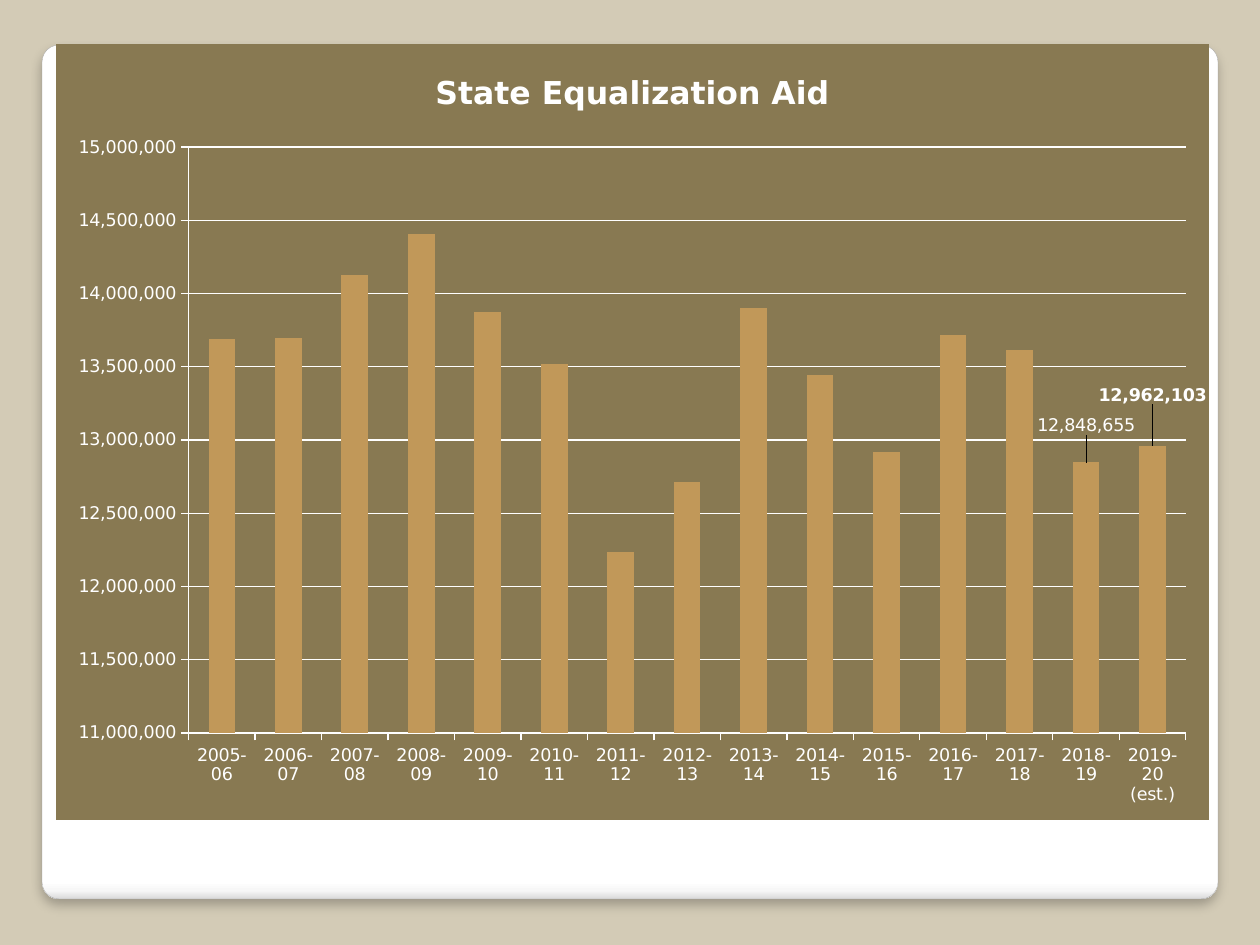
from dataclasses import dataclass

import pptx
import pptx.chart.data
import pptx.dml.color
import pptx.enum.chart
import pptx.enum.shapes
import pptx.oxml
import pptx.util
from pptx.oxml.ns import nsdecls

RGB = pptx.dml.color.RGBColor
BACKGROUND = RGB(0xD3, 0xCB, 0xB6)
WHITE = RGB(0xFF, 0xFF, 0xFF)
CARD_LINE = RGB(0xA4, 0xA4, 0xA4)
CHART_FILL = RGB(0x88, 0x79, 0x52)
BAR = RGB(0xC1, 0x98, 0x59)
FONT = "DejaVu Sans"
PX = 914400 / 126


@dataclass
class Box:
    left: int
    top: int
    width: int
    height: int

    def emu(self) -> list[int]:
        return [round(v * PX) for v in (self.left, self.top, self.width, self.height)]


@dataclass
class ValueLabel:
    point: int
    shift: int
    bold: bool


CARD = Box(42, 45, 1176, 854)
CHART = Box(56, 44, 1153, 776)
PLOT = Box(189, 147, 997, 586)
LABELS = [ValueLabel(13, -22, False), ValueLabel(14, -36, True)]
CARD_STOPS = [(0, WHITE), (98, WHITE), (99, RGB(0xF7, 0xF7, 0xF7)), (100, RGB(0xDA, 0xDA, 0xDA))]
CATEGORIES = [f"{y}-{(y + 1) % 100:02d}" for y in range(2005, 2019)] + ["2019-20 (est.)"]
AID = [
    13691185, 13698377, 14128181, 14408307, 13872778, 13516834, 12234555, 12713521,
    13899117, 13445860, 12917674, 13716336, 13616137, 12848655, 12962103,
]


def set_all(target, values: dict) -> None:
    for name, value in values.items():
        setattr(target, name, value)


def style_font(font, size: int, bold: bool = False) -> None:
    set_all(font, {"name": FONT, "size": pptx.util.Pt(size), "bold": bold})
    font.color.rgb = WHITE


def style_line(line, color: RGB, width: float) -> None:
    line.color.rgb = color
    line.width = pptx.util.Pt(width)


def layout_xml(**parts) -> str:
    inner = "".join(f'<c:{k} val="{v}"/>' for k, v in parts.items())
    return f'<c:layout {nsdecls("c")}><c:manualLayout>{inner}</c:manualLayout></c:layout>'


def add_card(s, box: Box) -> None:
    sp = s.shapes.add_shape(pptx.enum.shapes.MSO_SHAPE.ROUNDED_RECTANGLE, *box.emu())
    sp.adjustments[0] = 0.02
    style_line(sp.line, CARD_LINE, 0.16)
    stops = "".join(f'<a:gs pos="{p * 1000}"><a:srgbClr val="{c}"/></a:gs>' for p, c in CARD_STOPS)
    props = sp._element.spPr
    props.find(pptx.oxml.ns.qn("a:prstGeom")).addnext(pptx.oxml.parse_xml(
        f'<a:gradFill {nsdecls("a")}><a:gsLst>{stops}</a:gsLst>'
        '<a:lin ang="5400000" scaled="0"/></a:gradFill>'))
    props.append(pptx.oxml.parse_xml(
        f'<a:effectLst {nsdecls("a")}><a:outerShdw blurRad="76200" dist="50800" dir="5400000">'
        '<a:srgbClr val="000000"><a:alpha val="25000"/></a:srgbClr></a:outerShdw></a:effectLst>'))


def style_axes(chart) -> None:
    for axis in (chart.category_axis, chart.value_axis):
        axis.major_tick_mark = pptx.enum.chart.XL_TICK_MARK.OUTSIDE
        style_line(axis.format.line, WHITE, 0.75)
        style_font(axis.tick_labels.font, 10)
    axis = chart.value_axis
    set_all(axis, {"minimum_scale": 11000000, "maximum_scale": 15000000,
                   "major_unit": 500000, "has_major_gridlines": True})
    set_all(axis.tick_labels, {"number_format": "#,##0", "number_format_is_linked": False})
    style_line(axis.major_gridlines.format.line, WHITE, 0.75)


def add_value_label(series, label: ValueLabel) -> None:
    data_label = series.points[label.point].data_label
    style_font(data_label.font, 10, label.bold)
    data_label.position = pptx.enum.chart.XL_LABEL_POSITION.OUTSIDE_END
    dlbl = series.data_labels._element.dLbl_lst[-1]
    dlbl[0].addnext(pptx.oxml.parse_xml(layout_xml(x=0, y=round(label.shift / CHART.height, 3))))


def add_aid_chart(s, box: Box) -> None:
    data = pptx.chart.data.CategoryChartData(number_format="#,##0")
    data.categories = CATEGORIES
    data.add_series("Series 1", AID)
    kind = pptx.enum.chart.XL_CHART_TYPE.COLUMN_CLUSTERED
    chart = s.shapes.add_chart(kind, *box.emu(), data).chart
    style_font(chart.font, 10)
    chart.has_legend = False
    p = chart.chart_title.text_frame.paragraphs[0]
    r = p.add_run()
    r.text = "State Equalization Aid"
    style_font(r.font, 18, True)
    style_axes(chart)

    plot = chart.plots[0]
    set_all(plot, {"gap_width": 150, "vary_by_categories": False})
    series = plot.series[0]
    series.format.fill.solid()
    series.format.fill.fore_color.rgb = BAR
    set_all(series.data_labels, {"show_value": False, "number_format": "#,##0",
                                 "number_format_is_linked": False})
    for label in LABELS:
        add_value_label(series, label)

    space = chart._chartSpace
    area = space.chart.plotArea
    for old in area.findall(pptx.oxml.ns.qn("c:layout")):
        area.remove(old)
    area.insert(0, pptx.oxml.parse_xml(layout_xml(
        layoutTarget="inner", xMode="edge", yMode="edge",
        x=round((PLOT.left - box.left) / box.width, 3),
        y=round((PLOT.top - box.top) / box.height, 3),
        w=round(PLOT.width / box.width, 3),
        h=round(PLOT.height / box.height, 3))))
    space.chart.addnext(pptx.oxml.parse_xml(
        f'<c:spPr {nsdecls("c", "a")}><a:solidFill><a:srgbClr val="{CHART_FILL}"/></a:solidFill>'
        '<a:ln><a:noFill/></a:ln></c:spPr>'))


def main() -> None:
    prs = pptx.Presentation()
    set_all(prs, {"slide_width": pptx.util.Inches(10), "slide_height": pptx.util.Inches(7.5)})
    s = prs.slides.add_slide(prs.slide_layouts[6])
    s.background.fill.solid()
    s.background.fill.fore_color.rgb = BACKGROUND
    add_card(s, CARD)
    add_aid_chart(s, CHART)
    prs.save("out.pptx")


if __name__ == "__main__":
    main()
